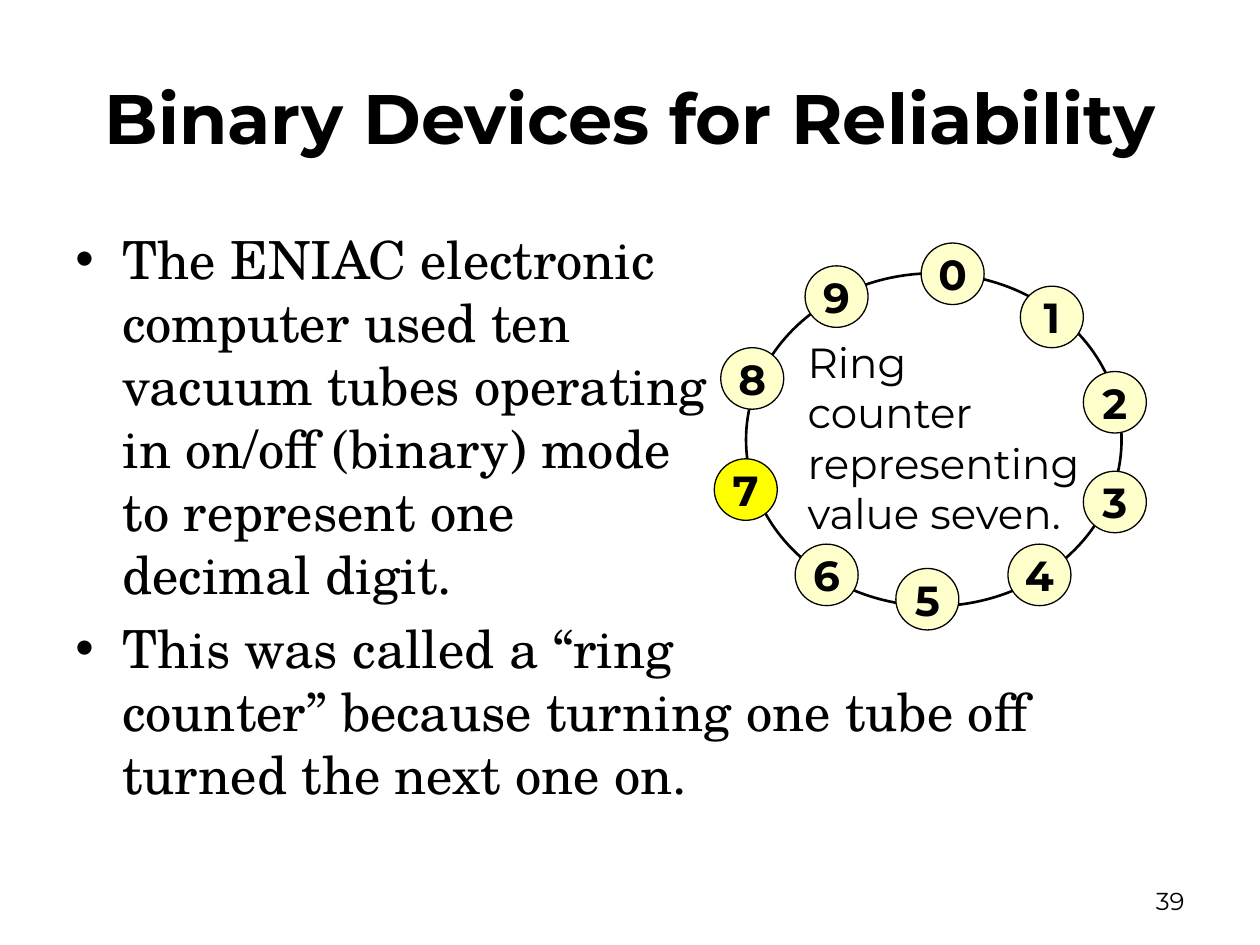
from dataclasses import dataclass

from lxml.etree import SubElement
from pptx import Presentation
from pptx.dml.color import RGBColor
from pptx.enum.shapes import MSO_SHAPE
from pptx.enum.text import MSO_ANCHOR, PP_ALIGN
from pptx.oxml.ns import qn
from pptx.util import Cm, Pt


@dataclass(frozen=True)
class Theme:
    ink: RGBColor = RGBColor(0, 0, 0)
    pale: RGBColor = RGBColor(0xFF, 0xFF, 0xCC)
    lit: RGBColor = RGBColor(0xFF, 0xFF, 0)
    sans: str = "Montserrat"
    serif: str = "TeX Gyre Schola"
    head: int = 40
    body: int = 30
    label: int = 24
    foot: int = 14


@dataclass(frozen=True)
class Box:
    left: float
    top: float
    width: float
    height: float

    def lengths(self):
        return [Cm(v) for v in (self.left, self.top, self.width, self.height)]

    def inner(self, left, top, width, height):
        return Box(self.left + left, self.top + top, width, height)


THEME = Theme()
LIT_DIGIT = 7
TUBE = (1.27, 1.24)
SPOTS = [(4.17, 0), (6.17, 0.87), (7.44, 2.59), (7.44, 4.6), (5.92, 6.07),
         (3.66, 6.56), (1.63, 6.07), (0, 4.35), (0.13, 2.11), (1.83, 0.46)]
POINTS = [
    "The ENIAC electronic\ncomputer used ten\nvacuum tubes operating\n"
    "in on/off (binary) mode\nto represent one\ndecimal digit.",
    "This was called a “ring\ncounter” because turning one tube off "
    "turned the next one on.",
]


def add_bullet(para, indent):
    props = para._p.get_or_add_pPr()
    props.set("marL", str(Cm(indent)))
    props.set("indent", str(-Cm(indent)))
    SubElement(props, qn("a:buFont")).set("typeface", "Arial")
    SubElement(props, qn("a:buChar")).set("char", "•")


def write(shape, *lines, size, face=THEME.sans, bold=False,
          align=PP_ALIGN.LEFT, anchor=MSO_ANCHOR.TOP, inset=(0.25, 0.13),
          wrap=True, bullet=0, gap=0):
    frame = shape.text_frame
    frame.word_wrap = wrap
    frame.vertical_anchor = anchor
    frame.margin_left = frame.margin_right = Cm(inset[0])
    frame.margin_top = frame.margin_bottom = Cm(inset[1])
    for i, line in enumerate(lines):
        para = frame.add_paragraph() if i else frame.paragraphs[0]
        para.text = line
        para.alignment = align
        if i and gap:
            para.space_before = Pt(gap)
        if bullet:
            add_bullet(para, bullet)
        for run in para.runs:
            run.font.name = face
            run.font.size = Pt(size)
            run.font.bold = bold
            run.font.color.rgb = THEME.ink


def add_disc(group, box, weight, fill=None):
    disc = group.shapes.add_shape(MSO_SHAPE.OVAL, *box.lengths())
    disc.shadow.inherit = False
    disc.line.color.rgb = THEME.ink
    disc.line.width = Pt(weight)
    if fill is None:
        disc.fill.background()
    else:
        disc.fill.solid()
        disc.fill.fore_color.rgb = fill
    return disc


def add_title(slide, box):
    title = slide.shapes.title
    title.left, title.top, title.width, title.height = box.lengths()
    write(title, "Binary Devices for Reliability", size=THEME.head, bold=True,
          align=PP_ALIGN.CENTER, anchor=MSO_ANCHOR.MIDDLE)


def add_points(slide, box):
    write(slide.shapes.add_textbox(*box.lengths()), *POINTS, size=THEME.body,
          face=THEME.serif, bullet=0.95, gap=6)


def add_number(slide, box):
    write(slide.shapes.add_textbox(*box.lengths()), "39", size=THEME.foot,
          align=PP_ALIGN.RIGHT, anchor=MSO_ANCHOR.MIDDLE)


def add_ring(slide, box):
    group = slide.shapes.add_group_shape()
    add_disc(group, box.inner(0.64, 0.61, 7.57, 6.71), 1.5)
    for digit, spot in enumerate(SPOTS):
        fill = THEME.lit if digit == LIT_DIGIT else THEME.pale
        tube = add_disc(group, box.inner(*spot, *TUBE), 0.75, fill)
        write(tube, str(digit), size=THEME.label, bold=True, inset=(0, 0),
              align=PP_ALIGN.CENTER, anchor=MSO_ANCHOR.MIDDLE, wrap=False)
    label = slide.shapes.add_textbox(*box.inner(1.58, 1.73, 6.15, 4.4).lengths())
    write(label, "Ring\ncounter\nrepresenting\nvalue seven.",
          size=THEME.label, inset=(0.3, 0.15))


def main():
    deck = Presentation()
    deck.slide_width, deck.slide_height = Cm(25.4), Cm(19.05)
    slide = deck.slides.add_slide(deck.slide_layouts.get_by_name("Title Only"))
    add_title(slide, Box(1.27, 0.76, 22.86, 3.18))
    add_points(slide, Box(1.27, 4.45, 22.86, 12.57))
    add_number(slide, Box(18.21, 17.65, 5.92, 1.02))
    add_ring(slide, Box(14.4, 4.9, 8.71, 7.8))
    deck.save("out.pptx")


if __name__ == "__main__":
    main()
